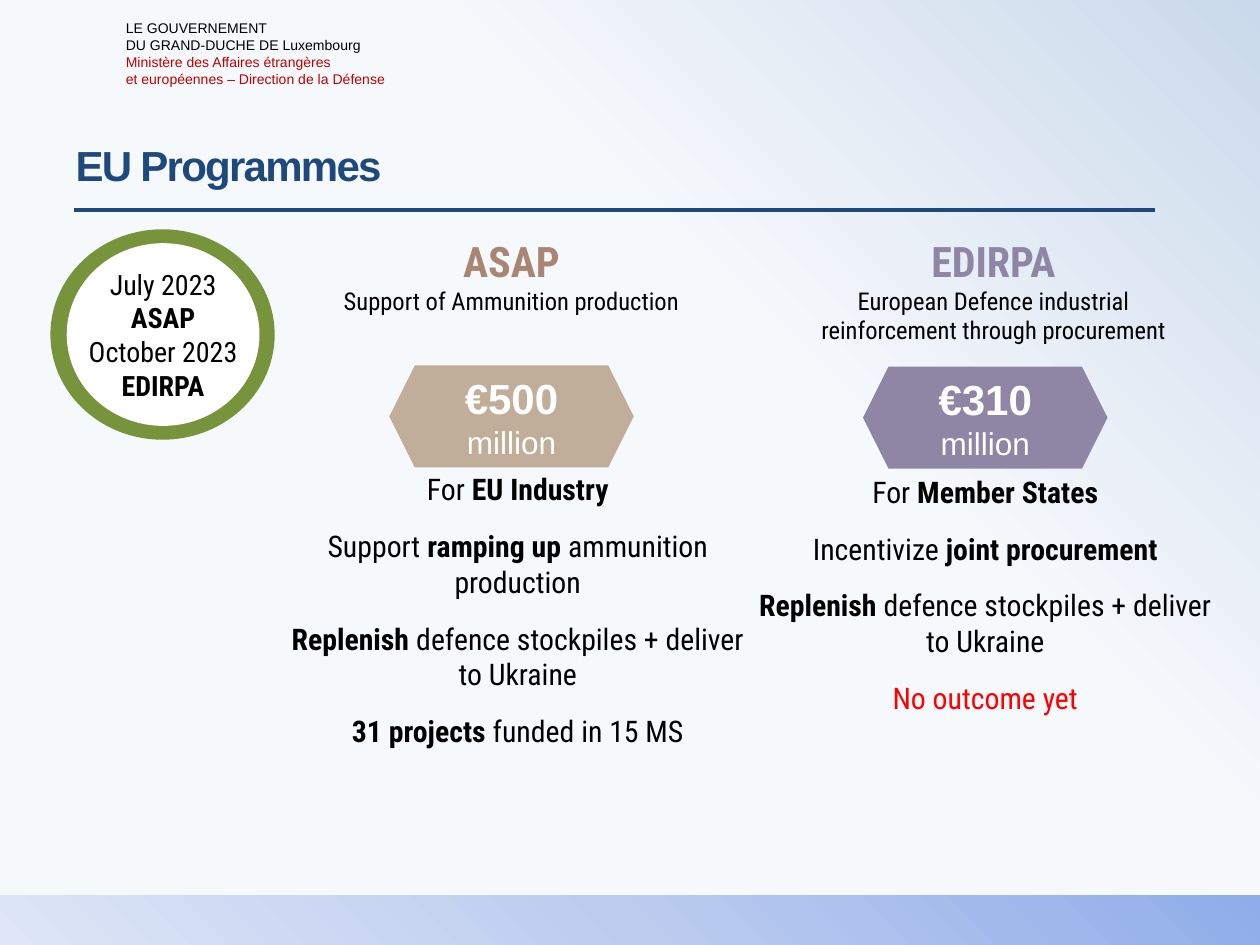
from pptx import Presentation, oxml
from pptx import util as u
from pptx.dml.color import RGBColor
from pptx.enum import shapes, text
from pptx.oxml import ns

NAVY = RGBColor(0x1F, 0x49, 0x7D)
BLACK = RGBColor(0, 0, 0)
WHITE = RGBColor(255, 255, 255)
CRIMSON = RGBColor(0xC0, 0, 0)
RED = RGBColor(255, 0, 0)
GREEN = RGBColor(0x77, 0x93, 0x3C)
TAN = RGBColor(0xC0, 0xAE, 0x9A)
BROWN = RGBColor(0xA9, 0x86, 0x73)
PURPLE = RGBColor(0x8F, 0x86, 0xA6)
SKY_LIGHT = RGBColor(0xF6, 0xF9, 0xFC)
SKY_DARK = RGBColor(0xCA, 0xD9, 0xEB)
BAND_STOPS = [(0, "8FADE9"), (50, "BCCCEF"), (100, "DEE6F7")]
SANS, CONDENSED = "Arial", "Roboto Condensed"
CENTER, LEFT = text.PP_ALIGN.CENTER, text.PP_ALIGN.LEFT


def place(box, left, top, width, height):
    box.left, box.top = u.Inches(left), u.Inches(top)
    box.width, box.height = u.Inches(width), u.Inches(height)


def write(frame, paras, font, align=CENTER, before=0, after=0):
    """Each paragraph is a list of runs: (words, size, bold, colour)."""
    for index, runs in enumerate(paras):
        para = frame.paragraphs[0] if index == 0 else frame.add_paragraph()
        para.alignment = align
        para.space_before = u.Pt(before if index else 0)
        para.space_after = u.Pt(after)
        for words, size, bold, colour in runs:
            span = para.add_run()
            span.text = words
            span.font.name, span.font.size = font, u.Pt(size)
            span.font.bold, span.font.color.rgb = bold, colour


def add_text(page, area, paras, font, wrap=True, **spacing):
    box = page.shapes.add_textbox(*map(u.Inches, area))
    box.text_frame.word_wrap = wrap
    write(box.text_frame, paras, font, **spacing)


def add_filled(page, kind, area, colour):
    box = page.shapes.add_shape(kind, *map(u.Inches, area))
    box.shadow.inherit = False
    box.line.fill.background()
    box.fill.solid()
    box.fill.fore_color.rgb = colour
    box.text_frame.vertical_anchor = text.MSO_ANCHOR.MIDDLE
    return box


def add_background(page):
    fill = page.background.fill
    fill.gradient()
    fill.gradient_angle = 45
    for stop, position, colour in zip(fill.gradient_stops, (0.62, 1), (SKY_LIGHT, SKY_DARK)):
        stop.position, stop.color.rgb = position, colour


def add_footer_band(page):
    band = add_filled(page, shapes.MSO_SHAPE.RECTANGLE, (-0.01, 7.11, 10.02, 0.4), WHITE)
    stops = "".join(f'<a:gs pos="{position * 1000}"><a:srgbClr val="{colour}"/></a:gs>'
                    for position, colour in BAND_STOPS)
    gradient = oxml.parse_xml(
        f'<a:gradFill {ns.nsdecls("a")}><a:gsLst>{stops}</a:gsLst>'
        '<a:path path="circle"><a:fillToRect l="100000" b="100000"/></a:path></a:gradFill>')
    properties = band.element.spPr
    properties.replace(properties.find(ns.qn("a:solidFill")), gradient)


def add_title(page):
    title = page.shapes.title
    place(title, 0.5, 0.95, 9, 0.72)
    title.text_frame.vertical_anchor = text.MSO_ANCHOR.MIDDLE
    write(title.text_frame, [[("EU Programmes", 24, True, NAVY)]], SANS, LEFT)
    span = title.text_frame.paragraphs[0].runs[0]
    span.font._element.set("spc", "-100")
    rule = page.shapes.add_connector(shapes.MSO_CONNECTOR.STRAIGHT, u.Inches(0.59),
                                     u.Inches(1.67), u.Inches(9.17), u.Inches(1.67))
    rule.line.color.rgb, rule.line.width = NAVY, u.Pt(2.25)
    rule.element.spPr.append(oxml.parse_xml(f'<a:effectLst {ns.nsdecls("a")}/>'))


def add_date_ring(page):
    oval = shapes.MSO_SHAPE.OVAL
    add_filled(page, oval, (0.4, 1.82, 1.78, 1.67), GREEN)
    disc = add_filled(page, oval, (0.53, 1.93, 1.53, 1.45), WHITE)
    frame = disc.text_frame
    frame.word_wrap = False
    frame.margin_left = frame.margin_right = frame.margin_top = frame.margin_bottom = 0
    lines = [("July 2023", False), ("ASAP", True), ("October 2023", False), ("EDIRPA", True)]
    write(frame, [[(words, 16, bold, BLACK)] for words, bold in lines], CONDENSED)


def add_heading(page, area, name, subtitle, colour):
    add_text(page, area, [[(name, 24, True, colour)], [(subtitle, 14, False, BLACK)]], CONDENSED)


def add_budget(page, left, top, amount, colour):
    hexagon = add_filled(page, shapes.MSO_SHAPE.HEXAGON, (left, top, 1.94, 0.81), colour)
    write(hexagon.text_frame,
          [[(amount, 24, True, WHITE)], [("million", 18, False, WHITE)]], SANS)


def add_points(page, area, points, **spacing):
    """Each point is a list of runs: (words, bold) or (words, bold, colour)."""
    paras = [[(words, 17, bold, *(colour or [BLACK])) for words, bold, *colour in runs]
             for runs in points]
    add_text(page, area, paras, CONDENSED, **spacing)


def main():
    deck = Presentation()
    deck.slide_width, deck.slide_height = u.Inches(10), u.Inches(7.5)
    page = deck.slides.add_slide(deck.slide_layouts[5])

    # Background, footer band and ministry header
    add_background(page)
    add_footer_band(page)
    header = [("LE GOUVERNEMENT", BLACK), ("DU GRAND-DUCHE DE Luxembourg", BLACK),
              ("Ministère des Affaires étrangères", CRIMSON),
              ("et européennes – Direction de la Défense", CRIMSON)]
    add_text(page, (0.9, 0.11, 2.29, 0.64),
             [[(words, 8, False, colour)] for words, colour in header],
             SANS, wrap=False, align=LEFT)

    # Title and dates
    add_title(page)
    add_date_ring(page)

    # ASAP column
    replenish = [("Replenish ", True), ("defence stockpiles + deliver to Ukraine", False)]
    add_heading(page, (2.43, 1.82, 3.26, 0.74), "ASAP", "Support of Ammunition production", BROWN)
    add_budget(page, 3.09, 2.9, "€500", TAN)
    add_points(page, (2.18, 3.69, 3.86, 2.32), [
        [("For ", False), ("EU Industry", True)],
        [("Support ", False), ("ramping up ", True), ("ammunition production", False)],
        replenish,
        [("31 projects ", True), ("funded in 15 MS", False)],
    ], after=12)

    # EDIRPA column
    add_heading(page, (6.33, 1.82, 3.11, 0.98), "EDIRPA",
                "European Defence industrial reinforcement through procurement", PURPLE)
    add_budget(page, 6.85, 2.91, "€310", PURPLE)
    add_points(page, (5.89, 3.71, 3.86, 2.04), [
        [("For ", False), ("Member States", True)],
        [("Incentivize ", False), ("joint procurement", True)],
        replenish,
        [("No outcome yet", False, RED)],
    ], before=12)

    deck.save("out.pptx")


if __name__ == "__main__":
    main()
